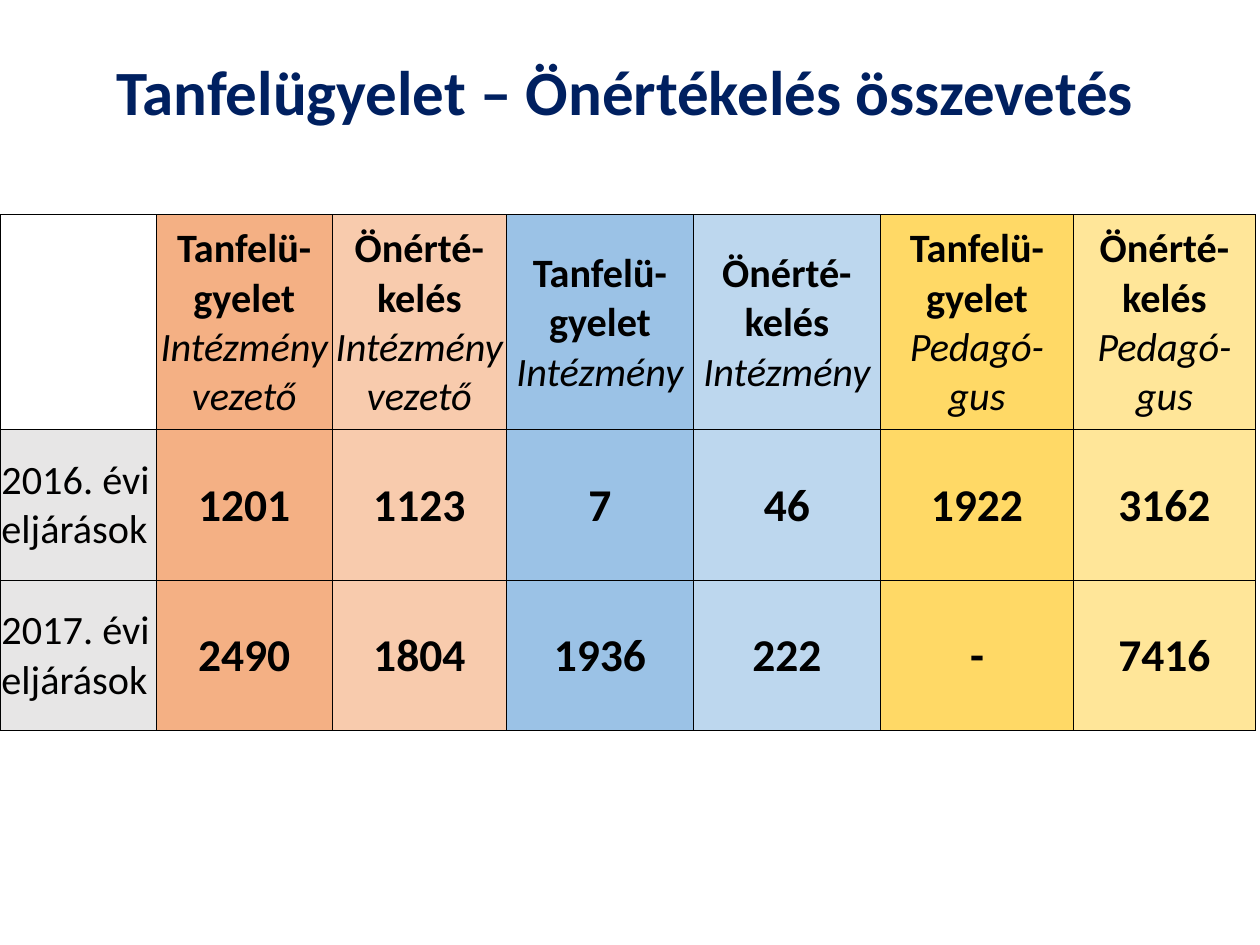
from lxml import etree
from pptx import Presentation
from pptx.dml.color import RGBColor
from pptx.enum.text import MSO_ANCHOR, PP_ALIGN
from pptx.oxml.ns import qn
from pptx.util import Cm, Pt

MID = MSO_ANCHOR.MIDDLE
LEFT, CENTER = PP_ALIGN.LEFT, PP_ALIGN.CENTER
HUES = {
    "navy": "002060", "black": "000000", "grey": "E7E6E6",
    "rust": "F4B084", "peach": "F8CBAD", "blue": "9BC2E6",
    "sky": "BDD7EE", "gold": "FFD966", "cream": "FFE699",
}
FILLS = ["grey", "rust", "peach", "blue", "sky", "gold", "cream"]
WIDTHS = [3.15, 3.55, 3.51, 3.77, 3.77, 3.89, 3.67]
HEIGHTS = [4.33, 3.03, 3.03]
KINDS = ["Tanfelü-gyelet ", "Önérté-kelés "]
ROLES = ["Intézményvezető", "Intézmény", "Pedagó-gus"]
YEARS = [
    ("2016. évi eljárások", ["1201", "1123", "7", "46", "1922", "3162"]),
    ("2017. évi eljárások", ["2490", "1804", "1936", "222", "-", "7416"]),
]


def write(frame, text, size=23, hue="black", bold=False, slant=False, align=CENTER):
    """Add a formatted run to the first paragraph of a text frame."""
    para = frame.paragraphs[0]
    para.alignment = align
    run = para.add_run()
    run.text = text
    font = run.font
    font.name, font.size = "Calibri", Pt(size)
    font.bold, font.italic = bold, slant
    font.color.rgb = RGBColor.from_string(HUES[hue])


def edge(cell):
    """Draw thin black borders around a cell."""
    props = cell._tc.get_or_add_tcPr()
    for spot, side in enumerate(("a:lnL", "a:lnR", "a:lnT", "a:lnB")):
        line = etree.Element(qn(side), w=str(Pt(0.5)))
        fill = etree.SubElement(line, qn("a:solidFill"))
        etree.SubElement(fill, qn("a:srgbClr"), val=HUES["black"])
        props.insert(spot, line)


def style(cell, hue):
    """Set the fill, margins, anchor and borders of a cell."""
    if hue:
        cell.fill.solid()
        cell.fill.fore_color.rgb = RGBColor.from_string(HUES[hue])
    else:
        cell.fill.background()
    cell.margin_left = cell.margin_right = cell.margin_top = Cm(0.03)
    cell.margin_bottom = 0
    cell.vertical_anchor = MID
    edge(cell)


def head(slide, text):
    """Place and fill the title."""
    title = slide.shapes.title
    title.left, title.top = Cm(1.17), Cm(0.33)
    title.width, title.height = Cm(22.86), Cm(3.17)
    frame = title.text_frame
    frame.vertical_anchor = MID
    write(frame, text, size=36, hue="navy", bold=True)
    frame.paragraphs[0].line_spacing = 0.9


def grid(slide):
    """Add the empty styled table and return it."""
    shape = slide.shapes.add_table(
        len(HEIGHTS), len(WIDTHS), 0, Cm(4.33), Cm(sum(WIDTHS)), Cm(sum(HEIGHTS)))
    table = shape.table
    table.first_row = table.horz_banding = False
    for col, width in zip(table.columns, WIDTHS):
        col.width = Cm(width)
    for r, height in enumerate(HEIGHTS):
        table.rows[r].height = Cm(height)
        for c, hue in enumerate(FILLS):
            style(table.cell(r, c), hue if r or c else None)
    return table


def fill(table):
    """Write the column heads, row labels and counts."""
    pairs = [(kind, role) for role in ROLES for kind in KINDS]
    for c, (kind, role) in enumerate(pairs, 1):
        frame = table.cell(0, c).text_frame
        write(frame, kind, bold=True)
        write(frame, role, slant=True)
    for r, (label, counts) in enumerate(YEARS, 1):
        write(table.cell(r, 0).text_frame, label, align=LEFT)
        for c, count in enumerate(counts, 1):
            write(table.cell(r, c).text_frame, count, size=26, bold=True)


def main():
    """Build and save the slide."""
    deck = Presentation()
    deck.slide_width, deck.slide_height = Cm(25.4), Cm(19.05)
    slide = deck.slides.add_slide(deck.slide_layouts[5])
    head(slide, "Tanfelügyelet – Önértékelés összevetés")
    fill(grid(slide))
    deck.save("out.pptx")


if __name__ == "__main__":
    main()
